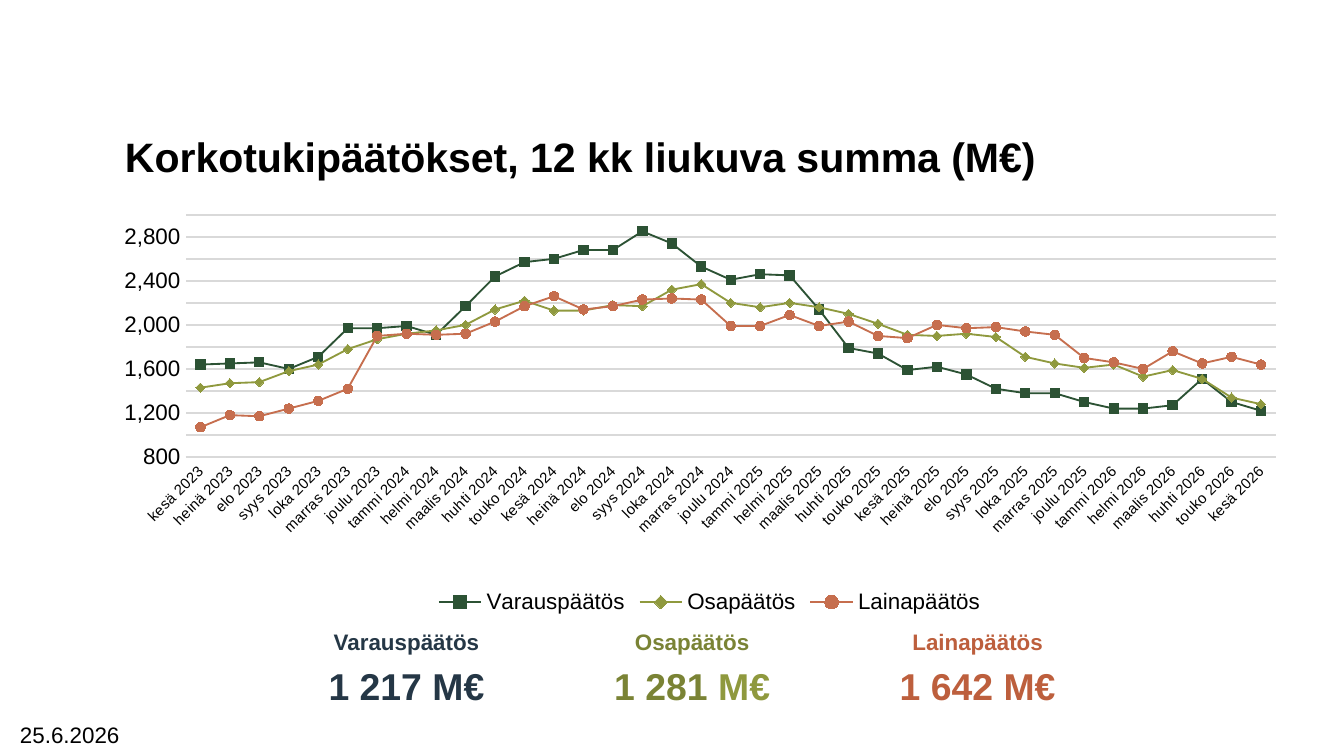
from dataclasses import dataclass
from typing import Optional

from lxml.etree import SubElement
from pptx import Presentation
from pptx.chart.data import CategoryChartData
from pptx.dml.color import RGBColor
from pptx.enum.chart import XL_CHART_TYPE, XL_LEGEND_POSITION, XL_MARKER_STYLE, XL_TICK_MARK
from pptx.enum.text import MSO_ANCHOR, MSO_AUTO_SIZE, PP_ALIGN
from pptx.oxml import parse_xml
from pptx.oxml.ns import nsdecls, qn
from pptx.util import Emu, Pt

SCALE = 4572  # EMU per px, 200 px to the inch
FONT = "Arial"
BLACK = RGBColor(0x00, 0x00, 0x00)
WHITE = RGBColor(0xFF, 0xFF, 0xFF)
GRID = RGBColor(0xD9, 0xD9, 0xD9)
NAVY = RGBColor(0x25, 0x37, 0x46)
GREEN = RGBColor(0x2C, 0x52, 0x34)
OLIVE = RGBColor(0x8F, 0x99, 0x3E)
DARK_OLIVE = RGBColor(0x7A, 0x83, 0x35)
TERRACOTTA = RGBColor(0xC6, 0x6E, 0x4E)
DARK_TERRACOTTA = RGBColor(0xBD, 0x5F, 0x3D)

MONTHS = ["tammi", "helmi", "maalis", "huhti", "touko", "kesä",
          "heinä", "elo", "syys", "loka", "marras", "joulu"]
FIRST_YEAR, FIRST_MONTH, MONTH_COUNT = 2023, 5, 37


@dataclass
class Decision:
    name: str
    line_color: RGBColor
    marker: XL_MARKER_STYLE
    values: list[int]
    amount: str
    left: int
    text_color: RGBColor
    unit_color: RGBColor
    fill: Optional[RGBColor]


DECISIONS = [
    Decision("Varauspäätös", GREEN, XL_MARKER_STYLE.SQUARE,
             [1640, 1650, 1660, 1600, 1710, 1970, 1970, 1990, 1910, 2170, 2440, 2570, 2600,
              2680, 2680, 2850, 2740, 2530, 2410, 2460, 2450, 2140, 1790, 1740, 1590, 1620,
              1550, 1420, 1380, 1380, 1300, 1240, 1240, 1270, 1510, 1300, 1220],
             "1 217", 400, NAVY, NAVY, None),
    Decision("Osapäätös", OLIVE, XL_MARKER_STYLE.DIAMOND,
             [1430, 1470, 1480, 1580, 1640, 1780, 1870, 1920, 1950, 2000, 2140, 2220, 2130,
              2130, 2180, 2170, 2320, 2370, 2200, 2160, 2200, 2160, 2100, 2010, 1910, 1900,
              1920, 1890, 1710, 1650, 1610, 1640, 1530, 1590, 1510, 1340, 1280],
             "1 281", 825, DARK_OLIVE, OLIVE, WHITE),
    Decision("Lainapäätös", TERRACOTTA, XL_MARKER_STYLE.CIRCLE,
             [1070, 1180, 1170, 1240, 1310, 1420, 1900, 1920, 1910, 1920, 2030, 2170, 2260,
              2140, 2170, 2230, 2240, 2230, 1990, 1990, 2090, 1990, 2030, 1900, 1880, 2000,
              1970, 1980, 1940, 1910, 1700, 1660, 1600, 1760, 1650, 1710, 1640],
             "1 642", 1250, DARK_TERRACOTTA, DARK_TERRACOTTA, WHITE),
]


def px(length: int) -> Emu:
    return Emu(length * SCALE)


def place(shape, left: int, top: int, width: int, height: int) -> None:
    shape.left, shape.top = px(left), px(top)
    shape.width, shape.height = px(width), px(height)


def prepare_frame(shape, anchor=MSO_ANCHOR.TOP):
    frame = shape.text_frame
    frame.word_wrap = True
    frame.auto_size = MSO_AUTO_SIZE.NONE
    frame.vertical_anchor = anchor
    return frame


def set_font(font, size: float, color: RGBColor = BLACK, bold: bool = False) -> None:
    font.name, font.size, font.bold = FONT, Pt(size), bold
    font.color.rgb = color


def write(paragraph, text: str, *, size: float, color: RGBColor = BLACK,
          bold: bool = False, align=PP_ALIGN.LEFT, before: float = 0) -> None:
    paragraph.alignment = align
    paragraph.space_before = Pt(before)
    run = paragraph.add_run()
    run.text = text
    set_font(run.font, size, color, bold)


def remove_bullet(paragraph) -> None:
    properties = paragraph._p.get_or_add_pPr()
    properties.set("marL", "0")
    properties.set("indent", "0")
    SubElement(properties, qn("a:buNone"))


def draw_total(shape, decision: Decision) -> None:
    place(shape, decision.left, 925, 410, 188)
    if decision.fill is not None:
        shape.fill.solid()
        shape.fill.fore_color.rgb = decision.fill
    frame = prepare_frame(shape)
    label, amount = frame.paragraphs[0], frame.add_paragraph()
    for paragraph in (label, amount):
        remove_bullet(paragraph)
    write(label, decision.name, size=12, color=decision.text_color, bold=True,
          align=PP_ALIGN.CENTER)
    for text, color in ((decision.amount, decision.text_color), (" M€", decision.unit_color)):
        write(amount, text, size=20, color=color, bold=True, align=PP_ALIGN.CENTER, before=4)


def month_names() -> list[str]:
    positions = range(FIRST_MONTH, FIRST_MONTH + MONTH_COUNT)
    return [f"{MONTHS[n % 12]} {FIRST_YEAR + n // 12}" for n in positions]


def set_plot_area(chart, left: float, top: float, width: float, height: float) -> None:
    """Place the inner plot area, in percent of the chart."""
    plot_area = chart._chartSpace.chart.plotArea
    for old in plot_area.findall(qn("c:layout")):
        plot_area.remove(old)
    sizes = "".join(f'<c:{tag} val="{percent / 100:.3f}"/>' for tag, percent in
                    (("x", left), ("y", top), ("w", width), ("h", height)))
    plot_area.insert(0, parse_xml(
        f'<c:layout {nsdecls("c")}><c:manualLayout><c:layoutTarget val="inner"/>'
        f'<c:xMode val="edge"/><c:yMode val="edge"/>{sizes}</c:manualLayout></c:layout>'))


def draw_chart(slide) -> None:
    data = CategoryChartData(number_format="#,##0")
    data.categories = month_names()
    for decision in DECISIONS:
        data.add_series(decision.name, decision.values)
    chart = slide.shapes.add_chart(XL_CHART_TYPE.LINE_MARKERS, px(182), px(294),
                                   px(1748), px(628), data).chart
    chart.has_title = False
    set_font(chart.font, 10)
    set_plot_area(chart, 5.4, 4.1, 92.8, 57.4)

    # Legend
    chart.has_legend = True
    chart.legend.position = XL_LEGEND_POSITION.BOTTOM
    chart.legend.include_in_layout = False
    set_font(chart.legend.font, 12)

    # Axes
    months, amounts = chart.category_axis, chart.value_axis
    for axis, size in ((months, 8), (amounts, 12)):
        axis.major_tick_mark = axis.minor_tick_mark = XL_TICK_MARK.NONE
        set_font(axis.tick_labels.font, size)
    months._element.txPr.bodyPr.set("rot", "-2700000")
    amounts.minimum_scale, amounts.maximum_scale, amounts.major_unit = 800, 3000, 200
    amounts.tick_labels.number_format = "#,##0"
    amounts.tick_labels.number_format_is_linked = False
    amounts.format.line.fill.background()
    for line in (months.format.line, amounts.major_gridlines.format.line):
        line.color.rgb = GRID
        line.width = Pt(0.75)

    # Series
    chart.plots[0].vary_by_categories = False
    for series, decision in zip(chart.plots[0].series, DECISIONS):
        series.smooth = False
        series.format.line.width = Pt(1)
        series.marker.style, series.marker.size = decision.marker, 5
        series.marker.format.fill.solid()
        series.marker.format.fill.fore_color.rgb = decision.line_color
        for line in (series.format.line, series.marker.format.line):
            line.color.rgb = decision.line_color


def main() -> None:
    presentation = Presentation()
    presentation.slide_width, presentation.slide_height = px(2000), px(1125)
    slide = presentation.slides.add_slide(presentation.slide_layouts.get_by_name("Comparison"))

    # Title
    title = slide.shapes.title
    place(title, 166, 194, 1764, 76)
    write(prepare_frame(title, MSO_ANCHOR.MIDDLE).paragraphs[0],
          "Korkotukipäätökset, 12 kk liukuva summa (M€)", size=22, bold=True)

    # Latest totals
    *bodies, spare = list(slide.placeholders)[1:]
    for body, decision in zip(bodies, DECISIONS):
        draw_total(body, decision)
    spare.element.getparent().remove(spare.element)

    # Date
    date = slide.shapes.add_textbox(px(10), px(1064), px(350), px(50))
    write(prepare_frame(date).paragraphs[0], "25.6.2026", size=12)

    draw_chart(slide)
    presentation.save("out.pptx")


if __name__ == "__main__":
    main()
